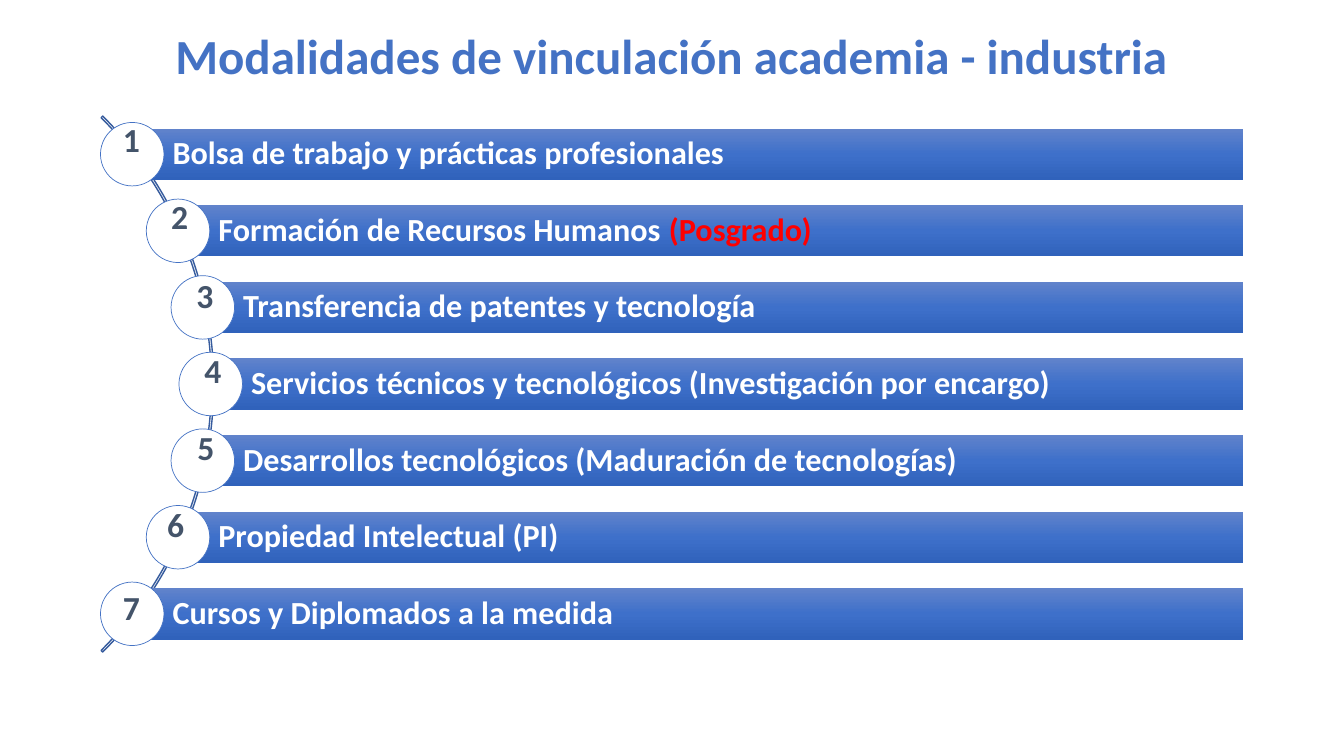
from copy import deepcopy
from math import sqrt

from pptx import Presentation
from pptx.dml.color import RGBColor
from pptx.enum.shapes import MSO_SHAPE as Form
from pptx.enum.text import MSO_ANCHOR as Anchor, MSO_AUTO_SIZE as Fit, PP_ALIGN as Align
from pptx.oxml.ns import qn
from pptx.util import Inches, Pt

FONT = "Calibri"
BLUE, SLATE, WHITE, RED = "4472C4", "44546A", "FFFFFF", "FF0000"
SHADES = [(0, "6183CB"), (0.5, "3E70CA"), (1, "3062BB")]
ITEMS = [
    [("Bolsa de trabajo y prácticas profesionales", WHITE)],
    [("Formación de Recursos Humanos ", WHITE), ("(Posgrado)", RED)],
    [("Transferencia de patentes y tecnología", WHITE)],
    [("Servicios técnicos y tecnológicos (Investigación por encargo)", WHITE)],
    [("Desarrollos tecnológicos (Maduración de tecnologías)", WHITE)],
    [("Propiedad Intelectual (PI)", WHITE)],
    [("Cursos y Diplomados a la medida", WHITE)],
]
SPOTS = [(1.12, 1.13), (1.6, 1.89), (1.85, 2.68), (1.93, 3.42),
         (1.86, 4.19), (1.56, 4.95), (1.12, 5.77)]
HUB_X, HUB_Y, REACH = -1.64, 3.81, 3.73
STEP, BAR, DISC, RIGHT = 0.76, 0.51, 0.63, 12.33


def tint(code):
    return RGBColor.from_string(code)


class Deck:
    """Draws the styled elements of the current slide."""

    def __init__(self):
        self.show = Presentation()
        self.show.slide_width = Inches(13.33)
        self.show.slide_height = Inches(7.5)
        self.slide = self.show.slides.add_slide(self.show.slide_layouts[6])

    def shape(self, form, x, y, w, h):
        item = self.slide.shapes.add_shape(form, *map(Inches, (x, y, w, h)))
        item.shadow.inherit = False
        return item

    def edge(self, item, color, width):
        item.line.color.rgb = tint(color)
        item.line.width = Pt(width)

    def label(self, frame, runs, size, align=Align.LEFT, space=None):
        para = frame.paragraphs[0]
        para.alignment = align
        para.line_spacing = space
        font = para.font
        font.name, font.size, font.bold = FONT, Pt(size), True
        if len(runs) == 1:
            font.color.rgb = tint(runs[0][1])
        for words, color in runs:
            run = para.add_run()
            run.text = words
            if len(runs) > 1:
                run.font.color.rgb = tint(color)

    def arc(self, x, y, size):
        item = self.shape(Form.BLOCK_ARC, x, y, size, size)
        for spot, value in enumerate((189, 27, 0.003)):
            item.adjustments[spot] = value
        item.fill.background()
        self.edge(item, "365B9D", 1)

    def bar(self, x, y, runs):
        item = self.shape(Form.RECTANGLE, x, y, RIGHT - x, BAR)
        item.line.fill.background()
        item.fill.gradient()
        item.fill.gradient_angle = 270
        stops = item._element.spPr.find(".//" + qn("a:gsLst"))
        stops.insert(1, deepcopy(stops[0]))
        for stop, (place, color) in zip(item.fill.gradient_stops, SHADES):
            stop.position = place
            stop.color.rgb = tint(color)
        frame = item.text_frame
        frame.vertical_anchor = Anchor.MIDDLE
        frame.margin_left = Inches(0.4)
        frame.margin_top = frame.margin_right = frame.margin_bottom = Inches(0.06)
        self.label(frame, runs, 23, space=0.9)

    def disc(self, x, y):
        item = self.shape(Form.OVAL, x, y, DISC, DISC)
        item.fill.solid()
        item.fill.fore_color.rgb = tint(WHITE)
        self.edge(item, BLUE, 0.5)

    def text(self, x, y, w, h):
        return self.slide.shapes.add_textbox(*map(Inches, (x, y, w, h))).text_frame

    def title(self, words):
        frame = self.text(0, 0.2, 13.33, 0.77)
        frame.word_wrap = True
        frame.vertical_anchor = Anchor.MIDDLE
        self.label(frame, [(words, BLUE)], 35, Align.CENTER, 0.9)

    def number(self, x, y, value):
        frame = self.text(x, y, 0.37, 0.5)
        frame.word_wrap = False
        frame.auto_size = Fit.SHAPE_TO_FIT_TEXT
        self.label(frame, [(str(value), SLATE)], 24)


def main():
    deck = Deck()
    deck.arc(-5.4, 0.05, 7.52)
    for row, runs in enumerate(ITEMS):
        rise = (row - len(ITEMS) // 2) * STEP
        x = HUB_X + sqrt(REACH ** 2 - rise ** 2)
        y = HUB_Y + rise
        deck.bar(x, y - BAR / 2, runs)
        deck.disc(x - DISC / 2, y - DISC / 2)
    deck.title("Modalidades de vinculación academia - industria")
    for value, (x, y) in enumerate(SPOTS, 1):
        deck.number(x, y, value)
    deck.show.save("out.pptx")


if __name__ == "__main__":
    main()
